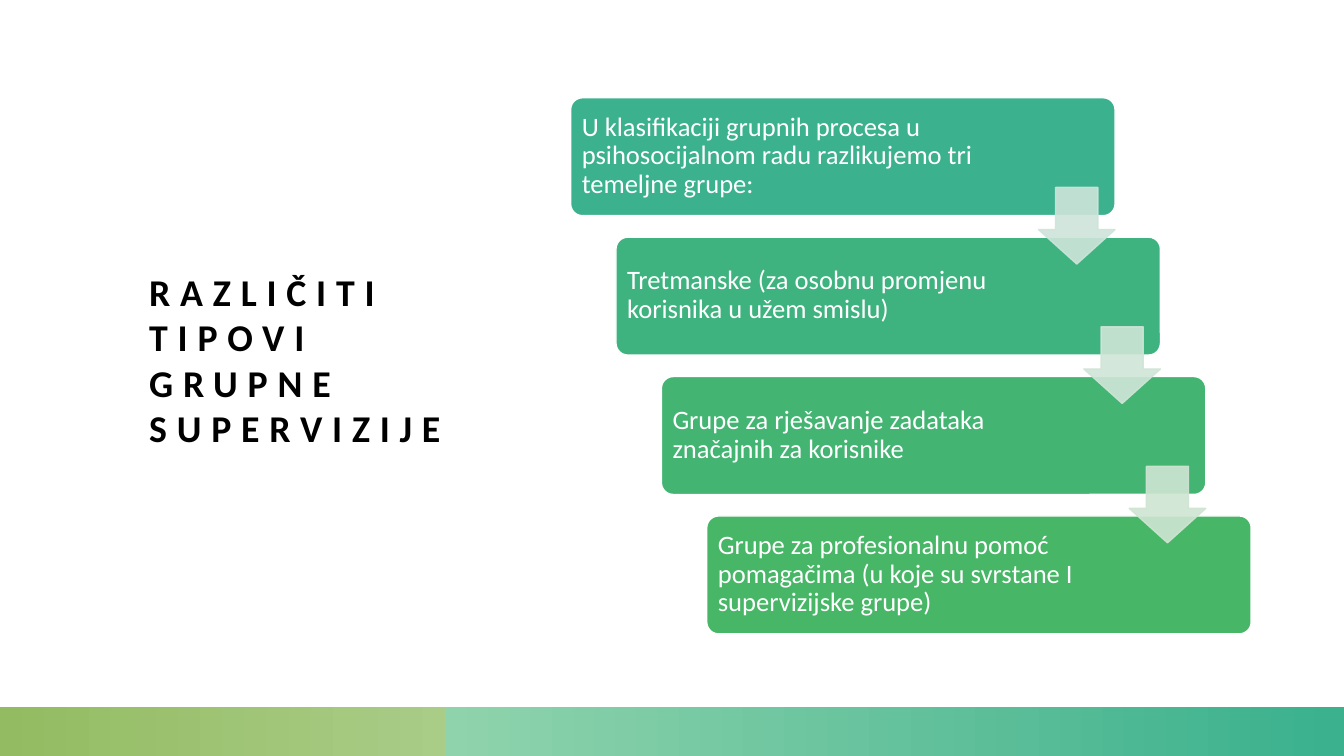
"""Build the slide on types of group supervision: a title and a descending staircase of steps."""
from lxml.etree import SubElement
from pptx import Presentation
from pptx.dml.color import RGBColor
from pptx.enum.shapes import MSO_SHAPE as Shape
from pptx.enum.text import MSO_ANCHOR as Anchor, PP_ALIGN as Align
from pptx.oxml.ns import qn
from pptx.util import Inches, Pt

WHITE = RGBColor(0xFF, 0xFF, 0xFF)
BLACK = RGBColor(0x00, 0x00, 0x00)
OLIVE = RGBColor(0x93, 0xBB, 0x61)
PALE_GREEN = RGBColor(0xCD, 0xE9, 0xC8)
MINT = RGBColor(0x8F, 0xD3, 0xAC)
TEAL = RGBColor(0x3B, 0xB1, 0x8D)
STEP_2 = RGBColor(0x3F, 0xB3, 0x7F)
STEP_3 = RGBColor(0x43, 0xB4, 0x72)
STEP_4 = RGBColor(0x47, 0xB6, 0x66)
ARROW_1 = RGBColor(0xCE, 0xE4, 0xDB)
ARROW_2 = RGBColor(0xCF, 0xE5, 0xD7)
ARROW_3 = RGBColor(0xCF, 0xE5, 0xD3)

STEPS = [
    ("U klasifikaciji grupnih procesa u psihosocijalnom radu razlikujemo tri temeljne grupe:", TEAL),
    ("Tretmanske (za osobnu promjenu korisnika u užem smislu)", STEP_2),
    ("Grupe za rješavanje zadataka značajnih za korisnike", STEP_3),
    ("Grupe za profesionalnu pomoć pomagačima (u koje su svrstane I supervizijske grupe)", STEP_4),
]
STEP_LEFT, STEP_TOP = 5.66, 0.97
SHIFT_X, SHIFT_Y = 0.45, 1.383

prs = Presentation()
prs.slide_width, prs.slide_height = Inches(13.33), Inches(7.5)
slide = prs.slides.add_slide(prs.slide_layouts[6])
shapes = slide.shapes


def add_text(text, left, top, width, height, *, size, color, bold=False,
             inset=0.0, line_spacing=1.0, tracking=0):
    """Place one paragraph, centred vertically, in a wrapping text box."""
    frame = shapes.add_textbox(Inches(left), Inches(top), Inches(width), Inches(height)).text_frame
    frame.word_wrap = True
    frame.vertical_anchor = Anchor.MIDDLE
    frame.margin_left = frame.margin_right = Inches(inset)
    frame.margin_top = frame.margin_bottom = Inches(inset)
    paragraph = frame.paragraphs[0]
    paragraph.alignment = Align.LEFT
    paragraph.line_spacing = line_spacing
    run = paragraph.add_run()
    run.text = text
    run.font.name, run.font.size, run.font.bold = "Calibri", Pt(size), bold
    run.font.color.rgb = color
    if tracking:
        run.font._element.set("spc", str(tracking * 100))


def add_block(kind, left, top, width, height):
    """Add a preset shape without a shadow."""
    block = shapes.add_shape(kind, Inches(left), Inches(top), Inches(width), Inches(height))
    block.shadow.inherit = False
    return block


for left, width, start, end, end_stop in [
    (0, 13.33, OLIVE, PALE_GREEN, 0.86),
    (4.42, 8.91, MINT, TEAL, 0.99),
]:
    band = add_block(Shape.RECTANGLE, left, 7.01, width, 0.49)
    band.line.fill.background()
    band.fill.gradient()
    band.fill.gradient_angle = 0
    for stop, color, position in zip(band.fill.gradient_stops, (start, end), (0, end_stop)):
        stop.color.rgb = color
        stop.position = position

add_text("RAZLIČITI TIPOVI GRUPNE SUPERVIZIJE", 1.48, 1.12, 3.64, 4.89,
         size=27, color=BLACK, bold=True, tracking=7)

for index, (label, color) in enumerate(STEPS):
    left, top = STEP_LEFT + index * SHIFT_X, STEP_TOP + index * SHIFT_Y
    step = add_block(Shape.ROUNDED_RECTANGLE, left, top, 5.4, 1.17)
    step.adjustments[0] = 0.1
    step.fill.solid()
    step.fill.fore_color.rgb = color
    step.line.color.rgb = WHITE
    step.line.width = Pt(1)
    add_text(label, left + 0.03, top + 0.03, 4.12, 1.1,
             size=19, color=WHITE, inset=0.08, line_spacing=0.9)

for index, color in enumerate((ARROW_1, ARROW_2, ARROW_3)):
    arrow = add_block(Shape.DOWN_ARROW, 10.3 + index * SHIFT_X, 1.86 + index * SHIFT_Y, 0.76, 0.76)
    arrow.adjustments[0], arrow.adjustments[1] = 0.55, 0.45
    arrow.fill.solid()
    arrow.fill.fore_color.rgb = color
    arrow.line.color.rgb = color
    arrow.line.width = Pt(1)
    for tint in arrow._element.spPr.iter(qn("a:srgbClr")):
        SubElement(tint, qn("a:alpha")).set("val", "90000")

prs.save("out.pptx")
